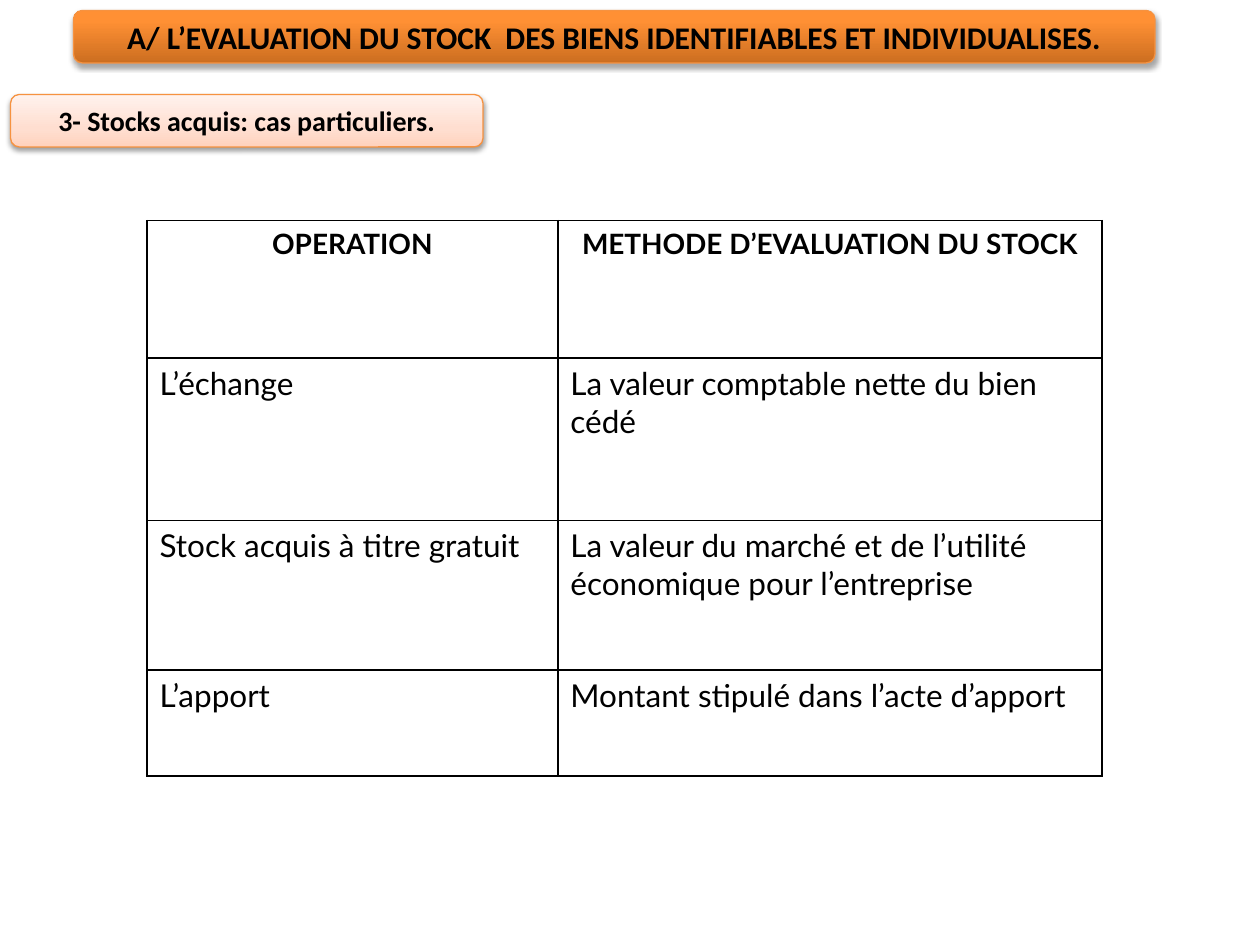
"""Build the slide on valuing acquired stocks in special cases."""
from dataclasses import dataclass

from lxml import etree
from pptx import Presentation
from pptx.dml.color import RGBColor
from pptx.enum.shapes import MSO_SHAPE
from pptx.enum.text import MSO_ANCHOR, PP_ALIGN
from pptx.oxml.ns import qn
from pptx.util import Pt

ROUND_RECT = MSO_SHAPE.ROUNDED_RECTANGLE
MIDDLE = MSO_ANCHOR.MIDDLE
CENTER, LEFT = PP_ALIGN.CENTER, PP_ALIGN.LEFT


@dataclass(frozen=True)
class Theme:
    """Colours, fonts and type sizes of the slide."""
    ink: str = "000000"
    outline: str = "F69240"
    strong: tuple = ((0, "CC6E20"), (80, "FF9034"), (100, "FF9136"))
    pale: tuple = ((0, "FFD2BD"), (35, "FFDED0"), (100, "FFF2ED"))
    banner_font: str = "Calibri"
    table_font: str = "Lato"
    title_size: int = 18
    subtitle_size: int = 16
    header_size: int = 16
    body_size: int = 18


THEME = Theme()
COLUMNS = (234.8, 311)
ROW_HEIGHTS = (78.5, 93, 85.5, 60.5)
ROWS = (
    ("OPERATION", "METHODE D’EVALUATION DU STOCK"),
    ("L’échange", "La valeur comptable nette du bien cédé"),
    ("Stock acquis à titre gratuit",
     "La valeur du marché et de l’utilité économique pour l’entreprise"),
    ("L’apport", "Montant stipulé dans l’acte d’apport"),
)


def add_child(parent, tag, **attrs):
    """Append a DrawingML element with the given attributes."""
    child = etree.SubElement(parent, qn(tag))
    for name, value in attrs.items():
        child.set(name, str(value))
    return child


def style_paragraph(p, font, size, bold, align):
    """Set the alignment and font of a paragraph."""
    p.alignment = align
    p.font.name = font
    p.font.size = Pt(size)
    p.font.bold = bold
    p.font.color.rgb = RGBColor.from_string(THEME.ink)


def set_gradient(sp, stops):
    """Fill a shape with a gradient running from bottom to top."""
    sp.fill.gradient()
    sp.fill.gradient_angle = 90
    gs_list = sp.element.spPr.find(qn("a:gradFill")).find(qn("a:gsLst"))
    for gs in list(gs_list):
        gs_list.remove(gs)
    for position, color in stops:
        gs = add_child(gs_list, "a:gs", pos=position * 1000)
        add_child(gs, "a:srgbClr", val=color)


def set_shadow(sp, distance, opacity):
    """Give a shape a soft shadow that falls straight down."""
    sp.shadow.inherit = False
    effects = sp.element.spPr.find(qn("a:effectLst"))
    shadow = add_child(effects, "a:outerShdw", blurRad=Pt(3.1),
                       dist=Pt(distance), dir=5400000, rotWithShape=0)
    color = add_child(shadow, "a:srgbClr", val=THEME.ink)
    add_child(color, "a:alpha", val=opacity * 1000)


def add_banner(s, text, box, stops, size, distance, opacity):
    """Add a rounded heading with a gradient and a shadow."""
    sp = s.shapes.add_shape(ROUND_RECT, *map(Pt, box))
    set_gradient(sp, stops)
    sp.line.color.rgb = RGBColor.from_string(THEME.outline)
    sp.line.width = Pt(0.75)
    set_shadow(sp, distance, opacity)
    tf = sp.text_frame
    tf.word_wrap = True
    tf.vertical_anchor = MIDDLE
    p = tf.paragraphs[0]
    p.text = text
    style_paragraph(p, THEME.banner_font, size, True, CENTER)


def set_borders(cell):
    """Draw a thin line on each side of a cell."""
    tc_pr = cell._tc.get_or_add_tcPr()
    for index, tag in enumerate(("a:lnL", "a:lnR", "a:lnT", "a:lnB")):
        ln = etree.Element(qn(tag), w=str(Pt(1)))
        add_child(add_child(ln, "a:solidFill"), "a:srgbClr", val=THEME.ink)
        tc_pr.insert(index, ln)


def fill_cell(cell, text, is_header):
    """Write and style the text of one cell."""
    cell.fill.background()
    set_borders(cell)
    size = THEME.header_size if is_header else THEME.body_size
    p = cell.text_frame.paragraphs[0]
    p.text = text
    p.space_before = Pt(size * 0.2)
    style_paragraph(p, THEME.table_font, size, is_header,
                    CENTER if is_header else LEFT)


def add_method_table(s, left, top):
    """Add the table of operations and valuation methods."""
    frame = s.shapes.add_table(len(ROWS), len(COLUMNS), Pt(left), Pt(top),
                               Pt(sum(COLUMNS)), Pt(sum(ROW_HEIGHTS)))
    table = frame.table
    table.first_row = False
    table.horz_banding = False
    for column, width in zip(table.columns, COLUMNS):
        column.width = Pt(width)
    for i, (row, height) in enumerate(zip(table.rows, ROW_HEIGHTS)):
        row.height = Pt(height)
        for cell, text in zip(row.cells, ROWS[i]):
            fill_cell(cell, text, i == 0)


def main():
    """Build and save the slide."""
    prs = Presentation()
    prs.slide_width, prs.slide_height = Pt(720), Pt(540)
    s = prs.slides.add_slide(prs.slide_layouts[6])
    add_method_table(s, 84, 126)
    add_banner(s, "A/ L’EVALUATION DU STOCK  DES BIENS IDENTIFIABLES ET INDIVIDUALISES.",
               (42, 6, 618, 30), THEME.strong, THEME.title_size, 1.8, 35)
    add_banner(s, "3- Stocks acquis: cas particuliers.",
               (6, 54, 270, 30), THEME.pale, THEME.subtitle_size, 1.6, 38)
    prs.save("out.pptx")


if __name__ == "__main__":
    main()
